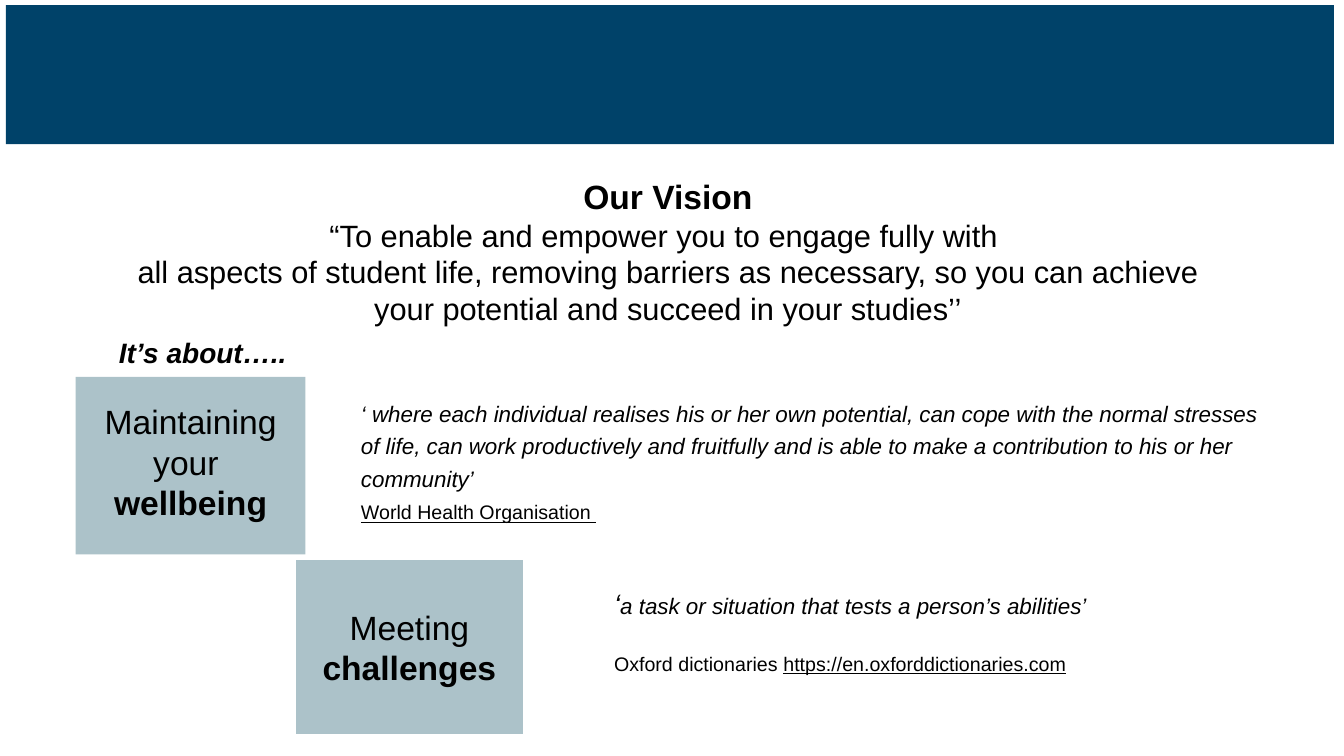
from pptx import Presentation
from pptx import util as u
from pptx.dml import color
from pptx.enum import shapes, text

FONT = "Arial"
BLACK, WHITE, NAVY, SAGE = "000000", "FFFFFF", "004269", "ACC2C9"


def rgb(value):
    return color.RGBColor.from_string(value)


def write(shape, paragraphs, align=text.PP_ALIGN.LEFT):
    frame = shape.text_frame
    frame.word_wrap = True
    for index, spans in enumerate(paragraphs):
        para = frame.add_paragraph() if index else frame.paragraphs[0]
        para.alignment = align
        for words, size, style in spans:
            span = para.add_run()
            span.text = words
            font = span.font
            font.name, font.size = FONT, u.Pt(size)
            font.color.rgb = rgb(BLACK)
            font.bold = "b" in style
            font.italic = "i" in style
            font.underline = "u" in style
    return frame


def add_block(page, box, fill, paragraphs=(), outline=None):
    block = page.shapes.add_shape(
        shapes.MSO_SHAPE.RECTANGLE, *map(u.Inches, box))
    block.shadow.inherit = False
    block.fill.solid()
    block.fill.fore_color.rgb = rgb(fill)
    if outline:
        block.line.color.rgb = rgb(outline)
        block.line.width = u.Pt(2)
    else:
        block.line.fill.background()
    frame = write(block, paragraphs, text.PP_ALIGN.CENTER)
    frame.vertical_anchor = text.MSO_ANCHOR.MIDDLE
    return frame


def add_words(page, box, paragraphs, inset=0.1):
    area = page.shapes.add_textbox(*map(u.Inches, box))
    frame = write(area, paragraphs)
    frame.margin_left = u.Inches(inset)
    return frame


def add_vision(page, box):
    add_block(page, box, WHITE, [
        [("Our Vision", 24, "b")],
        [("“To enable and empower you to engage fully with ", 22, "")],
        [("all aspects of student life, removing barriers as necessary, "
          "so you can achieve your potential and succeed in your studies’’",
          22, "")],
    ])


def add_wellbeing(page, left, top):
    frame = add_block(page, (left, top, 2.28, 1.76), SAGE, [
        [("Maintaining", 24, "")],
        [("your ", 24, "")],
        [("wellbeing", 24, "b")],
    ])
    frame.margin_bottom = u.Inches(0.13)
    quote = add_words(page, (left + 2.29, top + 0.13, 9.7, 1.76), [
        [("‘ where each individual realises his or her own potential, can "
          "cope with the normal stresses of life, can work productively and "
          "fruitfully and is able to make a contribution to his or her "
          "community’", 16, "i")],
        [("World Health Organisation ", 14, "u")],
    ], inset=0.54)
    for para in quote.paragraphs:
        para.line_spacing = 1.2
    quote.paragraphs[1].space_before = u.Pt(2.8)


def add_challenges(page, left, top):
    add_block(page, (left, top, 2.28, 1.76), SAGE, [
        [("Meeting ", 24, ""), ("challenges", 24, "b")],
    ], outline=WHITE)
    quote = add_words(page, (left + 2.63, top + 0.23, 5.73, 1), [
        [("‘", 20, "i"),
         ("a task or situation that tests a person’s abilities’", 16, "i")],
        [("Oxford dictionaries ", 14, ""),
         ("https://en.oxforddictionaries.com", 14, "u")],
    ], inset=0.54)
    quote.paragraphs[1].space_before = u.Pt(22.5)


def main():
    deck = Presentation()
    deck.slide_width, deck.slide_height = u.Inches(13.33), u.Inches(7.5)
    page = deck.slides.add_slide(deck.slide_layouts[6])
    add_block(page, (0.06, 0.05, 13.17, 1.38), NAVY)
    add_vision(page, (1.24, 1.49, 10.77, 2.01))
    add_words(page, (1.08, 3.28, 2.2, 0.43), [[("It’s about…..", 20, "bi")]])
    add_wellbeing(page, 0.75, 3.74)
    add_challenges(page, 2.92, 5.54)
    deck.save("out.pptx")


if __name__ == "__main__":
    main()
